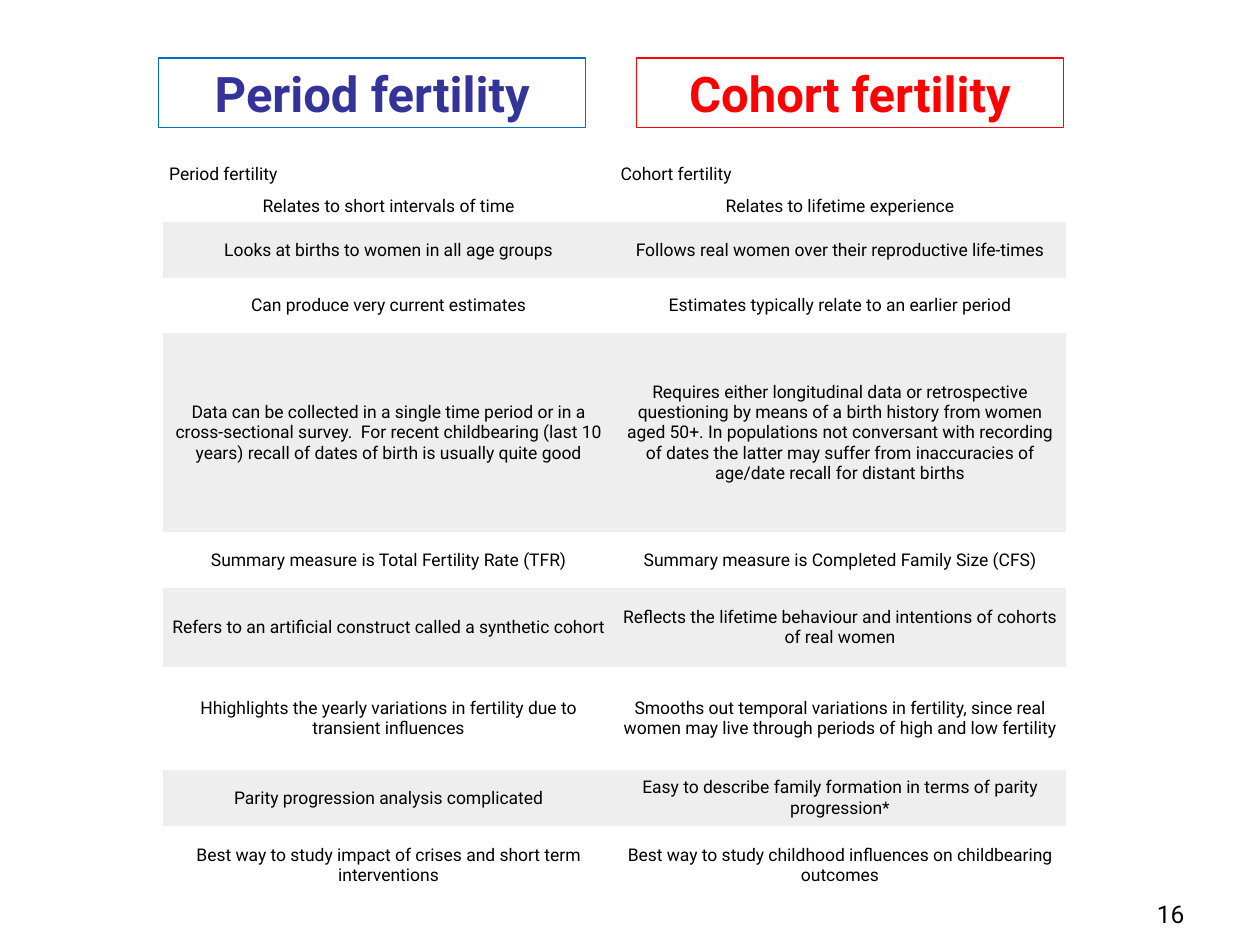
"""Build a slide that compares period fertility with cohort fertility."""
import pptx
import pptx.dml.color
import pptx.enum.shapes
import pptx.enum.text
import pptx.util

Cm = pptx.util.Cm
RGBColor = pptx.dml.color.RGBColor
Align = pptx.enum.text.PP_ALIGN
Anchor = pptx.enum.text.MSO_ANCHOR

BLACK = RGBColor(0x00, 0x00, 0x00)
BLUE = RGBColor(0x00, 0x70, 0xC0)
INDIGO = RGBColor(0x33, 0x33, 0x99)
RED = RGBColor(0xFF, 0x00, 0x00)
GREY = RGBColor(0xEE, 0xEE, 0xEE)
FONT = "Roboto"
PLAIN_TABLE_STYLE = "{2D5ABB26-0587-4C30-8999-92F81FD0307C}"

HEADINGS = [("Period fertility", INDIGO, BLUE), ("Cohort fertility", RED, RED)]
ROWS = [
    (0.64, "Period fertility", "Cohort fertility"),
    (0.64, "Relates to short intervals of time", "Relates to lifetime experience"),
    (1.12, "Looks at births to women in all age groups",
     "Follows real women over their reproductive life-times"),
    (1.12, "Can produce very current estimates",
     "Estimates typically relate to an earlier period"),
    (4.01, "Data can be collected in a single time period or in a cross-sectional survey.  "
     "For recent childbearing (last 10 years) recall of dates of birth is usually quite good",
     "Requires either longitudinal data or retrospective questioning by means of a birth "
     "history from women aged 50+. In populations not conversant with recording of dates "
     "the latter may suffer from inaccuracies of age/date recall for distant births"),
    (1.12, "Summary measure is Total Fertility Rate (TFR)",
     "Summary measure is Completed Family Size (CFS)"),
    (1.6, "Refers to an artificial construct called a synthetic cohort",
     "Reflects the lifetime behaviour and intentions of cohorts of real women"),
    (2.08, "Hhighlights the yearly variations in fertility due to transient influences",
     "Smooths out temporal variations in fertility, since real women may live through "
     "periods of high and low fertility"),
    (1.12, "Parity progression analysis complicated",
     "Easy to describe family formation in terms of parity progression*"),
    (1.6, "Best way to study impact of crises and short term interventions",
     "Best way to study childhood influences on childbearing outcomes"),
]
PAGE_NUMBER = "16"


def write(frame, text, size=10, color=BLACK, bold=False, align=Align.CENTER,
          anchor=Anchor.MIDDLE):
    frame.vertical_anchor = anchor
    para = frame.paragraphs[0]
    para.alignment = align
    span = para.add_run()
    span.text = text
    span.font.name = FONT
    span.font.size = pptx.util.Pt(size)
    span.font.bold = bold
    span.font.color.rgb = color


def add_headings(page):
    second = page.shapes.add_shape(pptx.enum.shapes.MSO_SHAPE.RECTANGLE, 0, 0, 0, 0)
    second.shadow.inherit = False
    for index, (box, heading) in enumerate(zip((page.shapes.title, second), HEADINGS)):
        text, color, outline = heading
        box.left, box.top = Cm(3.2 + 9.63 * index), Cm(1.17)
        box.width, box.height = Cm(8.61), Cm(1.4)
        box.fill.background()
        box.line.color.rgb = outline
        box.line.width = pptx.util.Pt(0.75)
        box.text_frame.auto_size = pptx.enum.text.MSO_AUTO_SIZE.NONE
        box.text_frame.word_wrap = False
        write(box.text_frame, text, size=28, color=color, bold=True)


def add_comparison(page):
    total = sum(row[0] for row in ROWS)
    frame = page.shapes.add_table(len(ROWS), 2, Cm(3.28), Cm(3.2), Cm(18.2), Cm(total))
    table = frame.table
    table.first_row = table.horz_banding = False
    table._tbl.tblPr[0].text = PLAIN_TABLE_STYLE
    for index, (height, *texts) in enumerate(ROWS):
        table.rows[index].height = Cm(height)
        shaded = index > 0 and index % 2 == 0
        for column, text in enumerate(texts):
            cell = table.cell(index, column)
            cell.margin_left = cell.margin_right = Cm(0.13)
            cell.margin_top = cell.margin_bottom = Cm(0.08)
            cell.vertical_anchor = Anchor.MIDDLE
            if shaded:
                cell.fill.solid()
                cell.fill.fore_color.rgb = GREY
            else:
                cell.fill.background()
            write(cell.text_frame, text, align=Align.CENTER if index else Align.LEFT)


def add_page_number(page):
    box = page.shapes.add_textbox(Cm(18.85), Cm(17.58), Cm(5.28), Cm(1.27))
    box.text_frame.word_wrap = True
    write(box.text_frame, PAGE_NUMBER, size=14, align=Align.RIGHT, anchor=Anchor.BOTTOM)


def main():
    deck = pptx.Presentation()
    deck.slide_width, deck.slide_height = Cm(25.4), Cm(19.05)
    page = deck.slides.add_slide(deck.slide_layouts.get_by_name("Title Only"))
    add_page_number(page)
    add_comparison(page)
    add_headings(page)
    deck.save("out.pptx")


if __name__ == "__main__":
    main()
